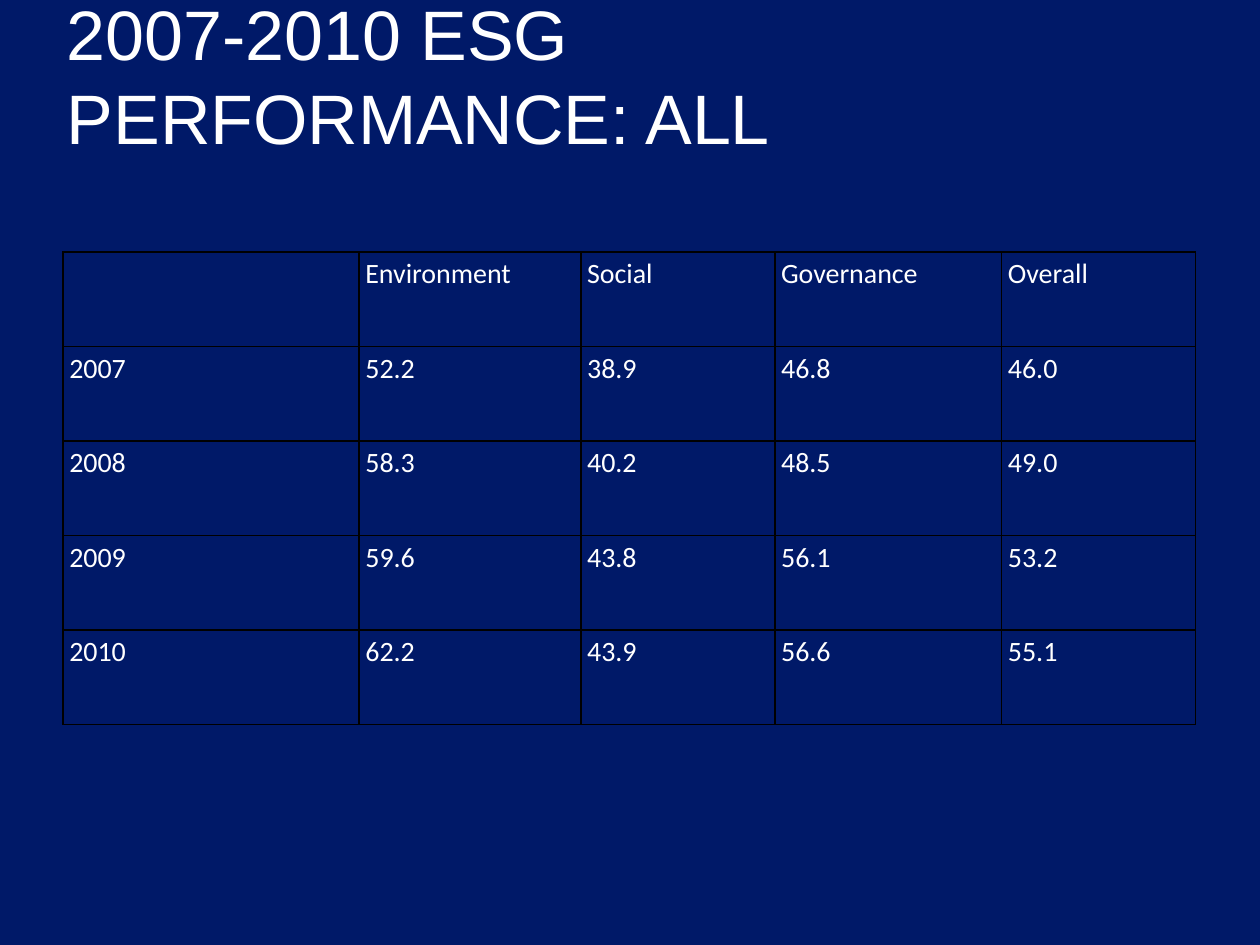
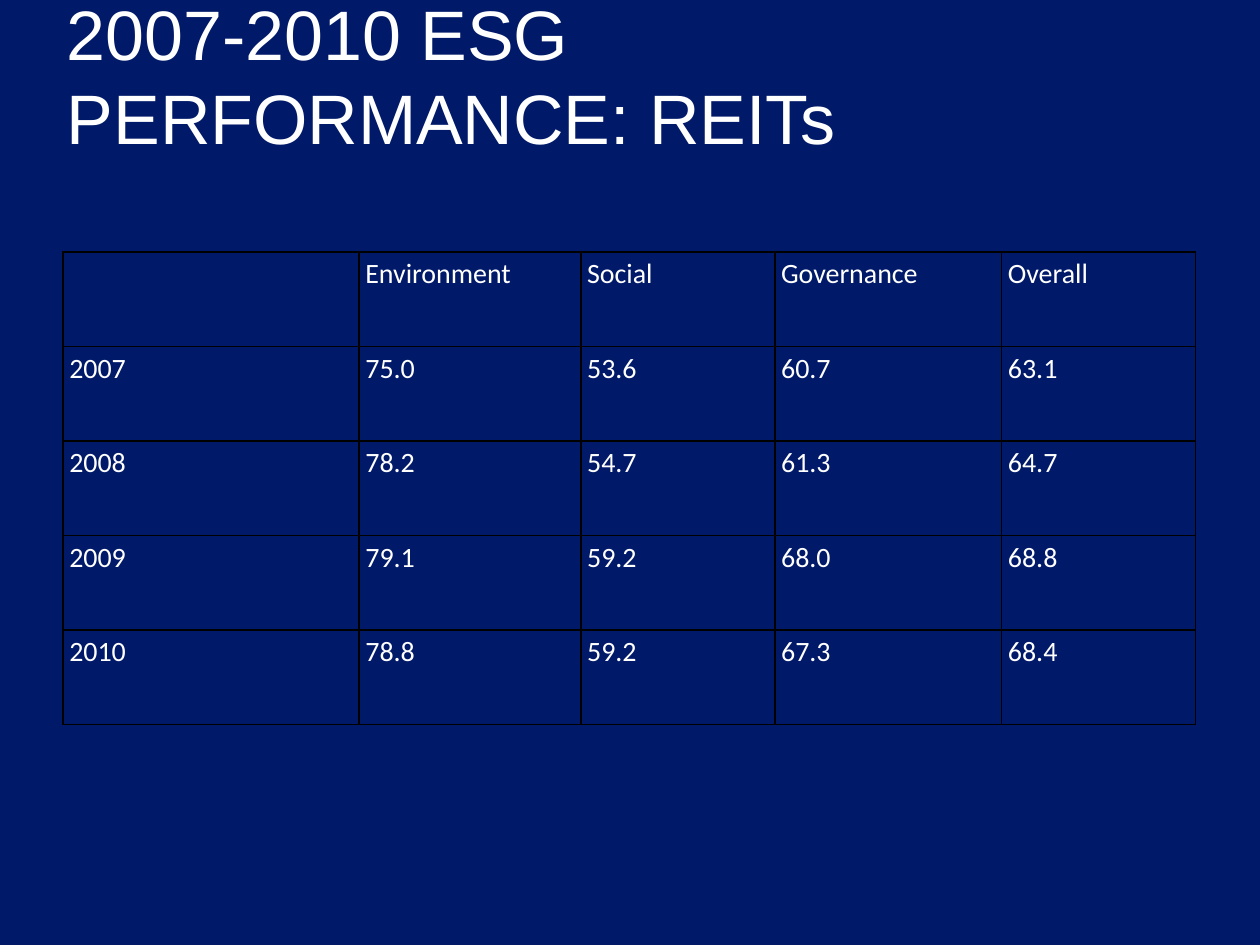
from lxml import etree
from pptx import Presentation
from pptx.dml.color import RGBColor
from pptx.enum.text import MSO_ANCHOR, MSO_AUTO_SIZE, PP_ALIGN
from pptx.oxml.ns import qn
from pptx.util import Inches, Pt

BOTTOM = MSO_ANCHOR.BOTTOM
LEFT = PP_ALIGN.LEFT
NO_AUTOFIT = MSO_AUTO_SIZE.NONE
TITLE_ONLY = 5

NAVY = "001968"
WHITE = "FFFFFF"
BLACK = "000000"

HEADERS = ["", "Environment", "Social", "Governance", "Overall"]
COLUMN_WIDTHS = [2.35, 1.76, 1.54, 1.8, 1.54]
ROW_HEIGHT = 0.75

ALL_SCORES = [
    ["2007", "52.2", "38.9", "46.8", "46.0"],
    ["2008", "58.3", "40.2", "48.5", "49.0"],
    ["2009", "59.6", "43.8", "56.1", "53.2"],
    ["2010", "62.2", "43.9", "56.6", "55.1"],
]
REIT_SCORES = [
    ["2007", "75.0", "53.6", "60.7", "63.1"],
    ["2008", "78.2", "54.7", "61.3", "64.7"],
    ["2009", "79.1", "59.2", "68.0", "68.8"],
    ["2010", "78.8", "59.2", "67.3", "68.4"],
]


def color(hex_string):
    return RGBColor.from_string(hex_string)


def write(frame, text, font="Calibri", size=16, fill=WHITE, spacing=1.0):
    """Fill the first paragraph of a frame, turning newlines into line breaks."""
    para = frame.paragraphs[0]
    para.alignment = LEFT
    para.line_spacing = spacing
    for number, line in enumerate(text.split("\n")):
        if number:
            para.add_line_break()
        span = para.add_run()
        span.text = line
        span.font.name = font
        span.font.size = Pt(size)
        span.font.color.rgb = color(fill)


def add_borders(cell, hex_string=BLACK, width=1):
    properties = cell._tc.get_or_add_tcPr()
    for side in ("lnL", "lnR", "lnT", "lnB"):
        line = etree.SubElement(properties, qn(f"a:{side}"), w=str(Pt(width)))
        fill = etree.SubElement(line, qn("a:solidFill"))
        etree.SubElement(fill, qn("a:srgbClr"), val=hex_string)


class EsgDeck:
    def __init__(self):
        self.deck = Presentation()
        self.deck.slide_width = Inches(10)
        self.deck.slide_height = Inches(7.5)
        background = self.deck.slide_master.background.fill
        background.solid()
        background.fore_color.rgb = color(NAVY)
        self.page = None

    def add_page(self):
        self.page = self.deck.slides.add_slide(self.deck.slide_layouts[TITLE_ONLY])

    def add_title(self, text):
        title = self.page.shapes.title
        title.left, title.top = Inches(0.43), Inches(0.52)
        title.width, title.height = Inches(9.14), Inches(0.79)
        frame = title.text_frame
        frame.auto_size = NO_AUTOFIT
        frame.vertical_anchor = BOTTOM
        write(frame, text, font="Arial", size=40)

    def add_score_table(self, scores):
        rows = [HEADERS, *scores]
        table = self.page.shapes.add_table(
            len(rows), len(HEADERS), Inches(0.5), Inches(2),
            Inches(sum(COLUMN_WIDTHS)), Inches(ROW_HEIGHT * len(rows)),
        ).table
        table.first_row = False
        table.horz_banding = False
        for column, width in zip(table.columns, COLUMN_WIDTHS):
            column.width = Inches(width)
        for row, values in zip(table.rows, rows):
            row.height = Inches(ROW_HEIGHT)
            for cell, value in zip(row.cells, values):
                self.format_cell(cell, value)

    def format_cell(self, cell, value):
        add_borders(cell)
        cell.fill.background()
        cell.margin_left = cell.margin_right = Inches(0.05)
        cell.margin_top = cell.margin_bottom = 0
        if value:
            write(cell.text_frame, value, spacing=1.15)


def main():
    esg = EsgDeck()
    for group, scores in (("ALL", ALL_SCORES), ("REITs", REIT_SCORES)):
        esg.add_page()
        esg.add_title(f"2007-2010 ESG \nPERFORMANCE: {group}")
        esg.add_score_table(scores)
    esg.deck.save("out.pptx")


if __name__ == "__main__":
    main()
